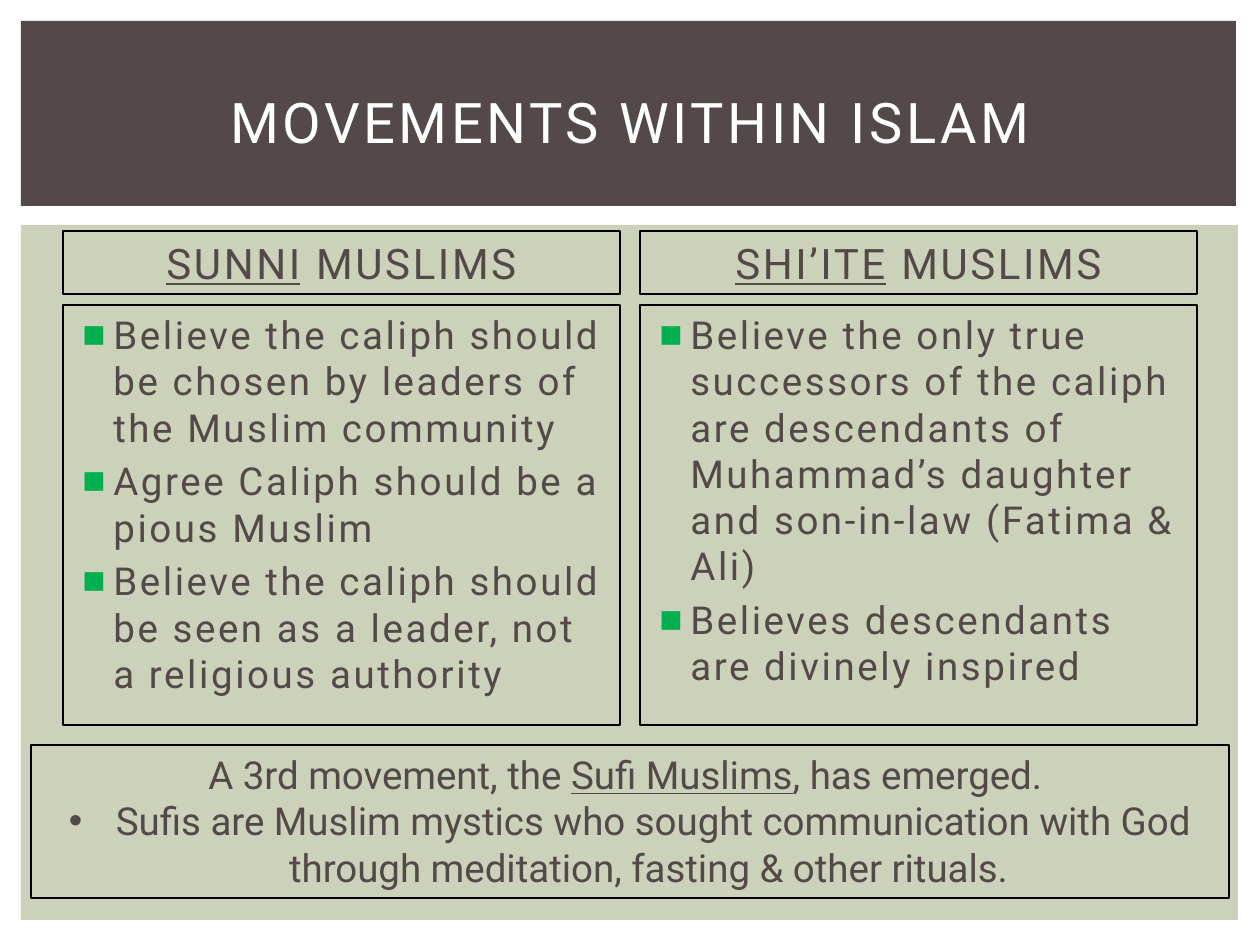
from lxml import etree
from pptx import Presentation
from pptx.dml.color import RGBColor
from pptx.enum.shapes import MSO_SHAPE
from pptx.enum.text import MSO_ANCHOR, PP_ALIGN
from pptx.oxml.ns import qn
from pptx.util import Pt

RECT = MSO_SHAPE.RECTANGLE
TOP, MIDDLE, BOTTOM = MSO_ANCHOR.TOP, MSO_ANCHOR.MIDDLE, MSO_ANCHOR.BOTTOM
LEFT, CENTER = PP_ALIGN.LEFT, PP_ALIGN.CENTER
FONT = "Roboto"
HUES = {"ink": "534949", "sage": "CCD1B9", "white": "FFFFFF",
        "line": "000000", "green": "00B050"}

SUNNI = ["Believe the caliph should be chosen by leaders of the Muslim community",
         "Agree Caliph should be a pious Muslim",
         "Believe the caliph should be seen as a leader, not a religious authority"]
SHIITE = ["Believe the only true successors of the caliph are descendants of "
          "Muhammad’s daughter and son-in-law (Fatima & Ali)",
          "Believes descendants are divinely inspired"]
SUFI = ["Sufis are Muslim mystics who sought communication with God "
        "through meditation, fasting & other rituals. "]


def px(n):
    return round(n * 914400 / 126)


def hue(name):
    return RGBColor.from_string(HUES[name])


def panel(slide, box, fill=None, anchor=TOP):
    """Draw a filled band, or an outlined text box when no fill is given."""
    shape = slide.shapes.add_shape(RECT, *map(px, box))
    shape.shadow.inherit = False
    if fill:
        shape.fill.solid()
        shape.fill.fore_color.rgb = hue(fill)
        shape.line.fill.background()
    else:
        shape.fill.background()
        shape.line.color.rgb = hue("line")
        shape.line.width = Pt(0.75)
    frame = shape.text_frame
    frame.word_wrap = True
    frame.vertical_anchor = anchor
    return frame


def style(para, size, color="ink", track=0, align=LEFT):
    para.alignment = align
    for run in para.runs:
        run.font.size = Pt(size)
        run.font.name = FONT
        run.font.color.rgb = hue(color)
        if track:
            run._r.get_or_add_rPr().set("spc", str(track))


def mixed(para, parts):
    """Add runs in turn; every (text, flag) pair says if it is underlined."""
    for text, under in parts:
        run = para.add_run()
        run.text = text
        run.font.underline = under


def bullet(para, char, margin, hang, color=None):
    props = para._p.get_or_add_pPr()
    props.set("marL", str(px(margin)))
    props.set("indent", str(-px(hang)))
    if color:
        tint = etree.SubElement(props, qn("a:buClr"))
        etree.SubElement(tint, qn("a:srgbClr")).set("val", HUES[color])
    etree.SubElement(props, qn("a:buFont")).set("typeface", "Arial")
    etree.SubElement(props, qn("a:buChar")).set("char", char)


def banner(slide, box, text):
    x, y, w, h = box
    panel(slide, box, "ink")
    title = slide.shapes.title
    slide.shapes._spTree.append(title._element)  # bring above the band
    title.left, title.top = px(x + 32), px(y + 28)
    title.width, title.height = px(w - 60), px(h - 40)
    frame = title.text_frame
    frame.text = text
    frame.vertical_anchor = MIDDLE
    style(frame.paragraphs[0], 32, "white", 200, CENTER)


def column(slide, box, name, items):
    x, y, w, h = box
    head, gap = 63, 11
    # Heading
    para = panel(slide, (x, y, w, head), anchor=BOTTOM).paragraphs[0]
    mixed(para, [(name, True), (" MUSLIMS", False)])
    style(para, 24, track=150, align=CENTER)
    # Bulleted points
    top = head + gap
    frame = panel(slide, (x, y + top, w, h - top))
    frame.text = "\n".join(items)
    for i, para in enumerate(frame.paragraphs):
        bullet(para, "■", 38, 31, "green")
        para.space_before = Pt(4.4 if i else 0)
        style(para, 22, track=150)


def footer(slide, box, items):
    frame = panel(slide, box)
    mixed(frame.paragraphs[0], [("A 3rd movement, the ", False),
                                ("Sufi Muslims", True),
                                (", has emerged. ", False)])
    for item in items:
        para = frame.add_paragraph()
        para.text = item
        bullet(para, "•", 47, 47)
    for para in frame.paragraphs:
        style(para, 22, align=CENTER)


def main():
    deck = Presentation()
    deck.slide_width, deck.slide_height = px(1260), px(945)
    slide = deck.slides.add_slide(deck.slide_layouts[5])
    slide.background.fill.solid()
    slide.background.fill.fore_color.rgb = hue("white")

    # Backdrop and title
    panel(slide, (21, 225, 1217, 695), "sage")
    banner(slide, (21, 21, 1215, 185), "MOVEMENTS WITHIN ISLAM")

    # Two columns
    wide, gap = 557, 20
    for i, (name, items) in enumerate([("SUNNI", SUNNI), ("SHI’ITE", SHIITE)]):
        column(slide, (63 + i * (wide + gap), 231, wide, 494), name, items)

    footer(slide, (31, 745, 1198, 153), SUFI)
    deck.save("out.pptx")


if __name__ == "__main__":
    main()
